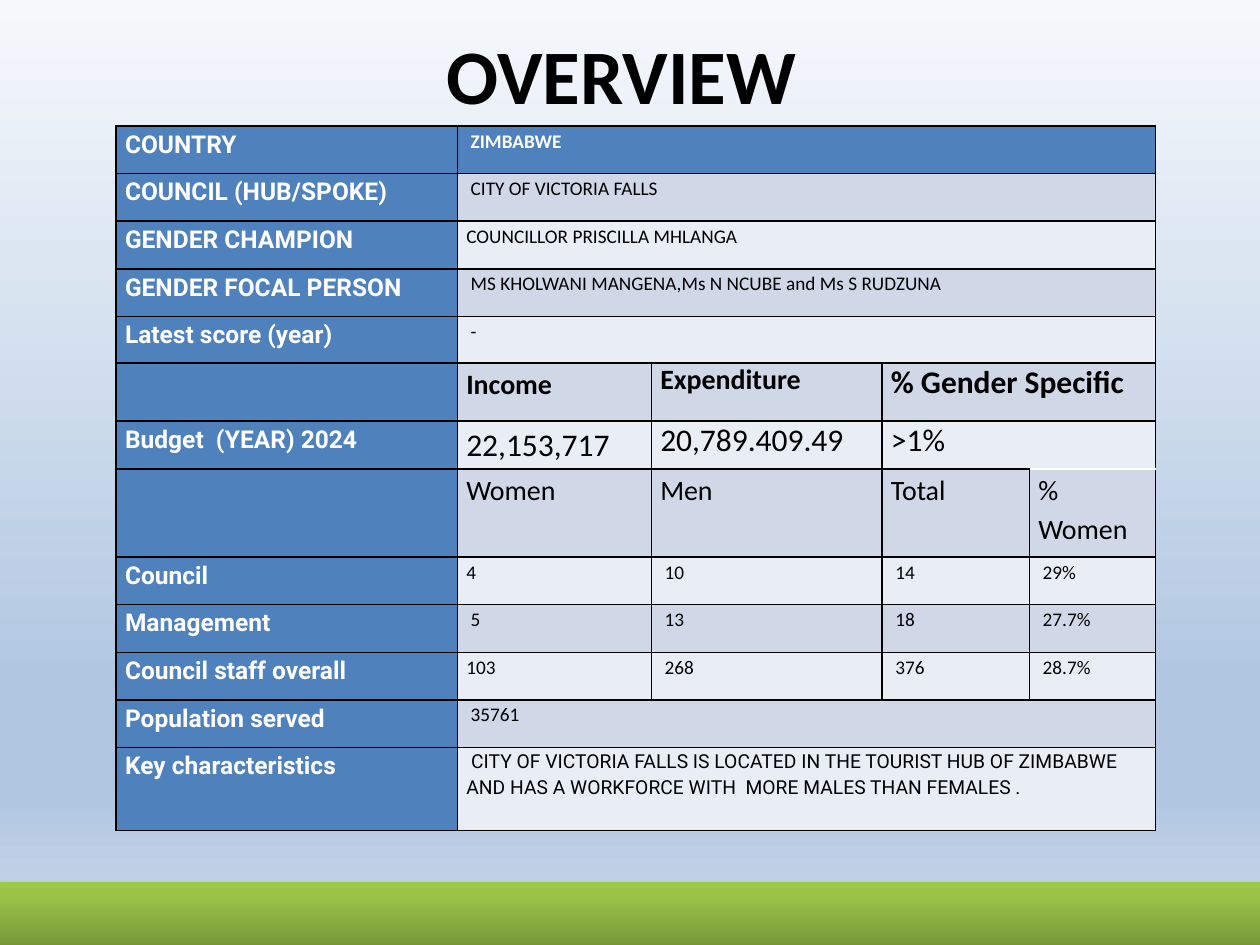
from lxml import etree
from pptx import Presentation
from pptx.dml.color import RGBColor
from pptx.enum.shapes import MSO_SHAPE
from pptx.enum.text import MSO_ANCHOR, PP_ALIGN
from pptx.oxml.ns import qn
from pptx.util import Cm, Pt

RECTANGLE = MSO_SHAPE.RECTANGLE
MIDDLE, CENTER = MSO_ANCHOR.MIDDLE, PP_ALIGN.CENTER
TITLE_ONLY = 5

BLUE, DARK_BAND, LIGHT_BAND = "4F81BD", "D0D8E8", "E9EDF4"
BLACK, WHITE = "000000", "FFFFFF"

LABEL = {"size": 14, "name": "Roboto", "color": WHITE, "bold": True}
BODY = {"size": 11, "name": "Calibri", "color": BLACK, "bold": False}
COUNTRY = {**BODY, "color": WHITE, "bold": True}
HEADING = {**BODY, "size": 16, "bold": True}
HEADING_TIGHT = {**HEADING, "spacing": 1.0}
HEADING_LARGE = {**HEADING_TIGHT, "size": 18}
AMOUNT = {**BODY, "size": 18}
AMOUNT_TIGHT = {**AMOUNT, "spacing": 1.0}
SUBHEADING = {**BODY, "size": 16}
REMARK = {**BODY, "name": "Roboto"}

COLUMN_WIDTHS = [6.88, 3.91, 4.65, 2.97, 2.54]
ROW_HEIGHT = 0.96
SPECIAL_HEIGHTS = {4: 0.94, 5: 1.17, 7: 1.78}
BUDGET_ROW, STAFF_HEADING_ROW = 6, 7
SPAN_START = {2: 1, 4: 3}

ROWS = [
    ("COUNTRY", [" ZIMBABWE"], [COUNTRY]),
    ("COUNCIL (HUB/SPOKE)", [" CITY OF VICTORIA FALLS"], [BODY]),
    ("GENDER CHAMPION", ["COUNCILLOR PRISCILLA MHLANGA"], [BODY]),
    ("GENDER FOCAL PERSON", [" MS KHOLWANI MANGENA,Ms N NCUBE and Ms S RUDZUNA"], [BODY]),
    ("Latest score (year)", [" -"], [BODY]),
    ("", ["Income", "Expenditure", "% Gender Specific"], [HEADING, HEADING_TIGHT, HEADING_LARGE]),
    ("Budget  (YEAR) 2024", ["22,153,717", "20,789.409.49", ">1%"],
     [AMOUNT, AMOUNT_TIGHT, AMOUNT_TIGHT]),
    ("", ["Women", "Men", "Total", "% Women"], [SUBHEADING] * 4),
    ("Council", ["4", " 10", " 14", " 29%"], [BODY] * 4),
    ("Management", [" 5", " 13", " 18", " 27.7%"], [BODY] * 4),
    ("Council staff overall", ["103 ", " 268", " 376", " 28.7%"], [BODY] * 4),
    ("Population served", [" 35761"], [BODY]),
    ("Key characteristics",
     [" CITY OF VICTORIA FALLS IS LOCATED IN THE TOURIST HUB OF ZIMBABWE "
      "AND HAS A WORKFORCE WITH  MORE MALES THAN FEMALES ."], [REMARK]),
]


def rgb(color):
    return RGBColor.from_string(color)


def add_color(parent, color):
    return etree.SubElement(parent, qn("a:srgbClr"), val=color)


def set_gradient(fill, element, stops, angle):
    fill.gradient()
    fill.gradient_angle = angle
    stop_list = next(element.iter(qn("a:gsLst")))
    for stop in list(stop_list):
        stop_list.remove(stop)
    for position, color in stops:
        add_color(etree.SubElement(stop_list, qn("a:gs"), pos=str(position * 1000)), color)


def format_font(font, values):
    for attribute, value in values.items():
        if attribute == "color":
            font.color.rgb = rgb(value)
        elif attribute == "size":
            font.size = Pt(value)
        elif attribute != "spacing":
            setattr(font, attribute, value)


def set_borders(cell, white_sides):
    properties = cell._tc.get_or_add_tcPr()
    for side in "LRTB":
        line = etree.SubElement(properties, qn(f"a:ln{side}"), w=str(Pt(1)))
        solid = etree.SubElement(line, qn("a:solidFill"))
        add_color(solid, WHITE if side in white_sides else BLACK)


def format_cell(cell, color, white_sides=""):
    set_borders(cell, white_sides)
    cell.fill.solid()
    cell.fill.fore_color.rgb = rgb(color)
    margins = {"margin_left": 0.18, "margin_right": 0.18, "margin_top": 0, "margin_bottom": 0}
    for attribute, value in margins.items():
        setattr(cell, attribute, Cm(value))


def write_cell(cell, text, values):
    if not text:
        return
    paragraph = cell.text_frame.paragraphs[0]
    paragraph.line_spacing = values.get("spacing", 1.15)
    run = paragraph.add_run()
    run.text = text
    format_font(run.font, values)


def fill_row(table, row, label, texts, formats):
    band = BLUE if row == 0 else DARK_BAND if row % 2 else LIGHT_BAND
    last = len(COLUMN_WIDTHS) - 1
    for column in range(last + 1):
        white_sides = {(BUDGET_ROW, last): "B", (STAFF_HEADING_ROW, last): "T"}.get((row, column), "")
        format_cell(table.cell(row, column), band if column else BLUE, white_sides)
    cells = [label, *texts]
    if len(cells) in SPAN_START:
        table.cell(row, SPAN_START[len(cells)]).merge(table.cell(row, last))
    for column, (text, values) in enumerate(zip(cells, [LABEL, *formats])):
        write_cell(table.cell(row, column), text, values)


def add_overview_table(slide, left, top, width, height):
    frame = slide.shapes.add_table(len(ROWS), len(COLUMN_WIDTHS),
                                   Cm(left), Cm(top), Cm(width), Cm(height))
    table = frame.table
    for column, column_width in zip(table.columns, COLUMN_WIDTHS):
        column.width = Cm(column_width)
    heights = [SPECIAL_HEIGHTS.get(row, ROW_HEIGHT) for row in range(len(ROWS) - 1)]
    heights.append(height - sum(heights))
    for row, (content, row_height) in enumerate(zip(ROWS, heights)):
        table.rows[row].height = Cm(row_height)
        fill_row(table, row, *content)


def place_title(slide, left, top, width, height):
    title = slide.shapes.title
    box = {"left": left, "top": top, "width": width, "height": height}
    for attribute, value in box.items():
        setattr(title, attribute, Cm(value))
    title.text_frame.vertical_anchor = MIDDLE
    paragraph = title.text_frame.paragraphs[0]
    paragraph.alignment = CENTER
    run = paragraph.add_run()
    run.text = "OVERVIEW "
    format_font(run.font, {"size": 44, "name": "Calibri", "color": BLACK, "bold": True})


def add_footer_band(slide, left, top, width, height):
    band = slide.shapes.add_shape(RECTANGLE, Cm(left), Cm(top), Cm(width), Cm(height))
    set_gradient(band.fill, band.element.spPr,
                 [(0, "779737"), (80, "9BC348"), (100, "9DC746")], 90)
    band.line.fill.background()
    band.shadow.inherit = False
    effects = band.element.spPr.find(qn("a:effectLst"))
    shadow = etree.SubElement(effects, qn("a:outerShdw"), blurRad=str(Pt(3.1)),
                              dist=str(Pt(1.8)), dir="5400000", rotWithShape="0")
    etree.SubElement(add_color(shadow, BLACK), qn("a:alpha"), val="35000")


def main():
    presentation = Presentation()
    presentation.slide_width, presentation.slide_height = Cm(25.4), Cm(19.05)
    slide = presentation.slides.add_slide(presentation.slide_layouts[TITLE_ONLY])
    set_gradient(slide.background.fill, slide.element,
                 [(0, "F6F9FC"), (74, "B0C6E1"), (83, "B0C6E1"), (100, "CAD9EB")], 270)
    place_title(slide, 1.27, 0.43, 22.86, 2.11)
    add_overview_table(slide, 2.34, 2.54, 20.95, 14.2)
    add_footer_band(slide, 0, 17.78, 25.93, 1.3)
    presentation.save("out.pptx")


if __name__ == "__main__":
    main()
